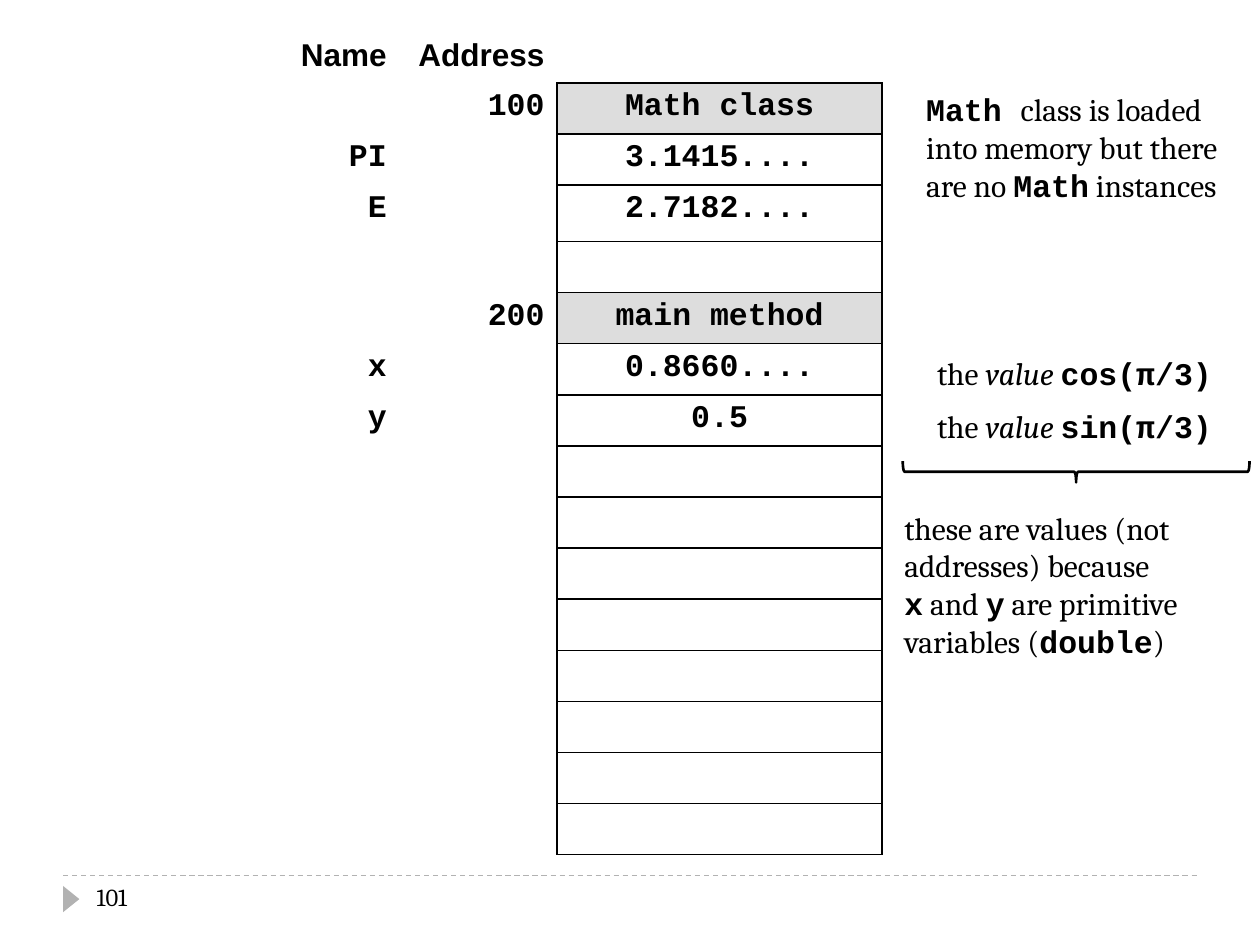
from lxml.etree import SubElement
from pptx import Presentation
from pptx.dml.color import RGBColor
from pptx.enum.dml import MSO_LINE
from pptx.enum.shapes import MSO_CONNECTOR, MSO_SHAPE
from pptx.enum.text import MSO_AUTO_SIZE, PP_ALIGN
from pptx.oxml.ns import qn
from pptx.util import Cm, Pt

BLACK = RGBColor(0x00, 0x00, 0x00)
WHITE = RGBColor(0xFF, 0xFF, 0xFF)
SHADE = RGBColor(0xDD, 0xDD, 0xDD)
GREY = RGBColor(0xB2, 0xB2, 0xB2)
HEADING, BODY, CODE = "Arial", "Cambria", "Courier New"

MEMORY = [
    ("Name", "Address", ""),
    ("", "100", "Math class"),
    ("PI", "", "3.1415...."),
    ("E", "", "2.7182...."),
    ("", "", ""),
    ("", "200", "main method"),
    ("x", "", "0.8660...."),
    ("y", "", "0.5"),
] + [("", "", "")] * 8
COLUMN_WIDTHS = (2.54, 3.18, 6.55)
ROW_HEIGHT, TALL_ROW_HEIGHT, TALL_ROW = 1.03, 1.14, 3

CLASS_NOTE = [
    [("Math ", "code"), ("class is loaded", "")],
    [("into memory but there", "")],
    [("are no ", ""), ("Math", "code"), (" instances", "")],
]
VALUES_NOTE = [
    [("these are values (not", "")],
    [("addresses) because", "")],
    [("x", "code"), (" and ", ""), ("y", "code"), (" are primitive", "")],
    [("variables (", ""), ("double", "code"), (")", "")],
]


def set_font(font, name, size=18, bold=False, italic=False):
    """Apply one black text style."""
    font.name, font.size = name, Pt(size)
    font.bold, font.italic = bold, italic
    font.color.rgb = BLACK


def set_borders(cell, colors):
    """Draw 1 pt borders in the order left, right, top, bottom."""
    properties = cell._tc.get_or_add_tcPr()
    for side, color in zip("LRTB", colors):
        border = SubElement(properties, qn(f"a:ln{side}"), w=str(Pt(1)))
        fill = SubElement(border, qn("a:solidFill"))
        SubElement(fill, qn("a:srgbClr"), val=str(color))


def add_memory_table(slide, left, top):
    """Place the table of names, addresses and memory contents."""
    height = ROW_HEIGHT * (len(MEMORY) - 1) + TALL_ROW_HEIGHT
    table = slide.shapes.add_table(
        len(MEMORY), len(COLUMN_WIDTHS), Cm(left), Cm(top),
        Cm(sum(COLUMN_WIDTHS)), Cm(height)).table
    table.first_row = table.horz_banding = False
    for column, width in zip(table.columns, COLUMN_WIDTHS):
        column.width = Cm(width)
    for r, entries in enumerate(MEMORY):
        table.rows[r].height = Cm(TALL_ROW_HEIGHT if r == TALL_ROW else ROW_HEIGHT)
        for c, entry in enumerate(entries):
            cell = table.cell(r, c)
            in_memory = c == 2 and r > 0
            side = BLACK if in_memory else WHITE
            right = BLACK if r > 0 and c > 0 else WHITE
            bottom = BLACK if c == 2 else WHITE
            set_borders(cell, (side, right, side, bottom))
            cell.fill.solid()
            cell.fill.fore_color.rgb = SHADE if in_memory and entries[1] else WHITE
            paragraph = cell.text_frame.paragraphs[0]
            paragraph.alignment = PP_ALIGN.CENTER if c == 2 else PP_ALIGN.RIGHT
            set_font(paragraph.font, CODE if r else HEADING, bold=True)
            if entry:
                paragraph.add_run().text = entry


def add_note(slide, left, top, width, height, lines):
    """Place a note whose lines mix body text, code and emphasis."""
    box = slide.shapes.add_textbox(Cm(left), Cm(top), Cm(width), Cm(height))
    frame = box.text_frame
    frame.word_wrap = False
    frame.auto_size = MSO_AUTO_SIZE.SHAPE_TO_FIT_TEXT
    for i, pieces in enumerate(lines):
        paragraph = frame.add_paragraph() if i else frame.paragraphs[0]
        for text, style in pieces:
            run = paragraph.add_run()
            run.text = text
            code = style == "code"
            set_font(run.font, CODE if code else BODY,
                     bold=code, italic=style == "emphasis")


def add_values(slide, left, top, width):
    """Place the two computed values with the brace below them."""
    for i, call in enumerate(("cos(π/3)", "sin(π/3)")):
        pieces = [("the ", ""), ("value ", "emphasis"), (call, "code")]
        add_note(slide, left + 0.44, top + 1.07 * i, 6.12, 1.03, [pieces])
    depth = 0.43
    center_x, center_y = left + width / 2, top + 2.5
    brace = slide.shapes.add_shape(
        MSO_SHAPE.LEFT_BRACE, Cm(center_x - depth / 2),
        Cm(center_y - width / 2), Cm(depth), Cm(width))
    brace.rotation = 270
    brace.shadow.inherit = False
    brace.fill.background()
    brace.line.color.rgb = BLACK
    brace.line.width = Pt(1.5)


def add_footer(slide, left, top, width, number):
    """Place the dashed rule, the marker and the slide number."""
    rule = slide.shapes.add_connector(
        MSO_CONNECTOR.STRAIGHT, Cm(left), Cm(top), Cm(left + width), Cm(top))
    rule.line.color.rgb = GREY
    rule.line.width = Pt(0.75)
    rule.line.dash_style = MSO_LINE.DASH
    SubElement(rule._element.spPr, qn("a:effectLst"))

    marker = slide.shapes.add_shape(
        MSO_SHAPE.ISOSCELES_TRIANGLE, Cm(left - 0.1), Cm(top + 0.31),
        Cm(0.53), Cm(0.33))
    marker.rotation = 90
    marker.shadow.inherit = False
    marker.fill.solid()
    marker.fill.fore_color.rgb = GREY
    marker.line.fill.background()

    box = slide.shapes.add_textbox(Cm(left + 0.43), Cm(top), Cm(5.5), Cm(1.02))
    box.text_frame.word_wrap = True
    paragraph = box.text_frame.paragraphs[0]
    set_font(paragraph.font, BODY, size=14)
    paragraph.add_run().text = number


def main():
    """Build the memory diagram slide and save it."""
    deck = Presentation()
    deck.slide_width, deck.slide_height = Cm(25.4), Cm(19.05)
    slide = deck.slides.add_slide(deck.slide_layouts[6])
    add_footer(slide, 1.27, 17.65, 22.86, "101")
    add_memory_table(slide, 5.51, 0.64)
    add_note(slide, 18.42, 1.7, 6.78, 2.57, CLASS_NOTE)
    add_values(slide, 18.2, 7.01, 6.99)
    add_note(slide, 17.98, 10.13, 6.22, 3.33, VALUES_NOTE)
    deck.save("out.pptx")


if __name__ == "__main__":
    main()
